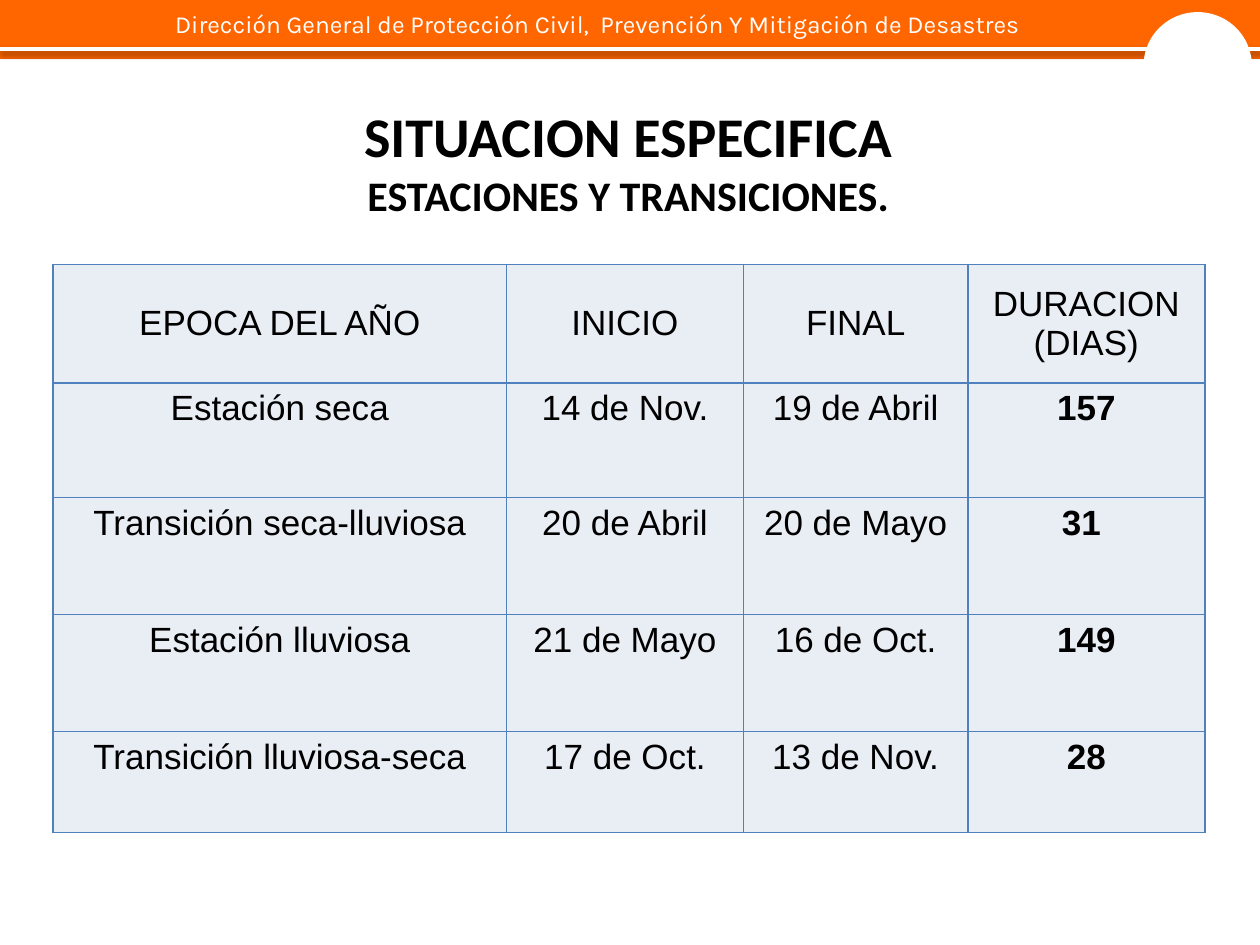
"""Build the slide on seasons and transitions with its table of dates."""
from dataclasses import dataclass

import pptx
import pptx.dml.color
import pptx.enum.shapes
import pptx.enum.text
import pptx.oxml
import pptx.oxml.ns
import pptx.util

Cm, Pt = pptx.util.Cm, pptx.util.Pt
SHAPE = pptx.enum.shapes.MSO_SHAPE
ALIGN = pptx.enum.text.PP_ALIGN
ANCHOR = pptx.enum.text.MSO_ANCHOR
NS = pptx.oxml.ns.nsdecls("a")

ORANGE, WHITE, BLACK = "FF6600", "FFFFFF", "000000"
CELL_FILL, BORDER = "E9EDF4", "4F81BD"


@dataclass
class Box:
    left: float
    top: float
    width: float
    height: float

    def emu(self) -> tuple:
        return Cm(self.left), Cm(self.top), Cm(self.width), Cm(self.height)


@dataclass
class Line:
    text: str
    size: float
    font: str
    color: str = BLACK
    bold: bool = False


@dataclass
class Season:
    name: str
    start: str
    end: str
    days: str
    height: float


HEADINGS = ("EPOCA DEL AÑO", "INICIO", "FINAL", "DURACION\n(DIAS)")
HEADING_HEIGHT = 2.39
COLUMN_WIDTHS = (9.14, 4.78, 4.52, 4.78)
SEASONS = (
    Season("Estación seca", "14 de Nov.", "19 de Abril", "157", 2.31),
    Season("Transición seca-lluviosa", "20 de Abril", "20 de Mayo", "31 ", 2.36),
    Season("Estación lluviosa", "21 de Mayo", "16 de Oct.", "149", 2.36),
    Season("Transición lluviosa-seca", "17 de Oct.", "13 de Nov.", "28", 2.03),
)


def rgb(value: str) -> pptx.dml.color.RGBColor:
    return pptx.dml.color.RGBColor.from_string(value)


def write(tf, lines: list[Line], align=ALIGN.CENTER) -> None:
    for i, line in enumerate(lines):
        p = tf.paragraphs[0] if i == 0 else tf.add_paragraph()
        p.alignment = align
        r = p.add_run()
        r.text = line.text
        r.font.size = Pt(line.size)
        r.font.name = line.font
        r.font.bold = line.bold
        r.font.color.rgb = rgb(line.color)


def add_text(s, box: Box, lines: list[Line], align=ALIGN.CENTER) -> None:
    tf = s.shapes.add_textbox(*box.emu()).text_frame
    tf.word_wrap = True
    write(tf, lines, align)


def add_plain_shape(s, kind, box: Box, color: str, outlined: bool = False) -> None:
    sp = s.shapes.add_shape(kind, *box.emu())
    sp.shadow.inherit = False
    sp.fill.solid()
    sp.fill.fore_color.rgb = rgb(color)
    if outlined:
        sp.line.color.rgb = rgb(color)
        sp.line.width = Pt(2)
    else:
        sp.line.fill.background()


def add_shadowed_rule(s, y: float, width: float) -> None:
    rule = s.shapes.add_connector(
        pptx.enum.shapes.MSO_CONNECTOR.STRAIGHT, Cm(0), Cm(y), Cm(width), Cm(y))
    rule.line.color.rgb = rgb(WHITE)
    rule.line.width = Pt(2)
    rule._element.spPr.append(pptx.oxml.parse_xml(
        f'<a:effectLst {NS}><a:outerShdw blurRad="{Pt(3.1)}" dist="{Pt(1.6)}" '
        f'dir="5400000" rotWithShape="0"><a:srgbClr val="{BLACK}">'
        f'<a:alpha val="38000"/></a:srgbClr></a:outerShdw></a:effectLst>'))


def style_cell(cell) -> None:
    tcPr = cell._tc.get_or_add_tcPr()
    for side in "LRTB":
        tcPr.append(pptx.oxml.parse_xml(
            f'<a:ln{side} {NS} w="{Pt(1)}"><a:solidFill><a:srgbClr val="{BORDER}"/>'
            f'</a:solidFill></a:ln{side}>'))
    cell.fill.solid()
    cell.fill.fore_color.rgb = rgb(CELL_FILL)


def add_season_table(s, left: float, top: float) -> None:
    heights = [HEADING_HEIGHT] + [season.height for season in SEASONS]
    rows = [HEADINGS] + [(x.name, x.start, x.end, x.days) for x in SEASONS]
    box = Box(left, top, sum(COLUMN_WIDTHS), sum(heights))
    table = s.shapes.add_table(len(rows), len(HEADINGS), *box.emu()).table
    table.first_row = table.horz_banding = False
    for column, width in zip(table.columns, COLUMN_WIDTHS):
        column.width = Cm(width)
    for i, (texts, height) in enumerate(zip(rows, heights)):
        table.rows[i].height = Cm(height)
        for j, text in enumerate(texts):
            cell = table.cell(i, j)
            style_cell(cell)
            cell.vertical_anchor = ANCHOR.MIDDLE if i == 0 else ANCHOR.TOP
            bold = i > 0 and j == len(HEADINGS) - 1
            write(cell.text_frame,
                  [Line(part, 20, "Arial", bold=bold) for part in text.split("\n")])


def main() -> None:
    prs = pptx.Presentation()
    prs.slide_width, prs.slide_height = Cm(25.4), Cm(19.05)
    s = prs.slides.add_slide(prs.slide_layouts[6])
    add_plain_shape(s, SHAPE.RECTANGLE, Box(0, 0, 25.4, 1.19), ORANGE)
    add_shadowed_rule(s, 0.99, 25.4)
    add_text(s, Box(3.28, 0.05, 22.63, 0.84), [
        Line("Dirección General de Protección Civil,  Prevención Y Mitigación de Desastres",
             14, "Karla", WHITE)], ALIGN.JUSTIFY)
    add_plain_shape(s, SHAPE.OVAL, Box(23.09, 0.28, 2.11, 2.08), WHITE, outlined=True)
    add_text(s, Box(5.16, 1.93, 15.01, 2.64), [
        Line("SITUACION ESPECIFICA", 32, "Calibri", bold=True),
        Line("ESTACIONES Y TRANSICIONES.", 24, "Calibri", bold=True)])
    add_season_table(s, 1.07, 5.33)
    prs.save("out.pptx")


if __name__ == "__main__":
    main()
